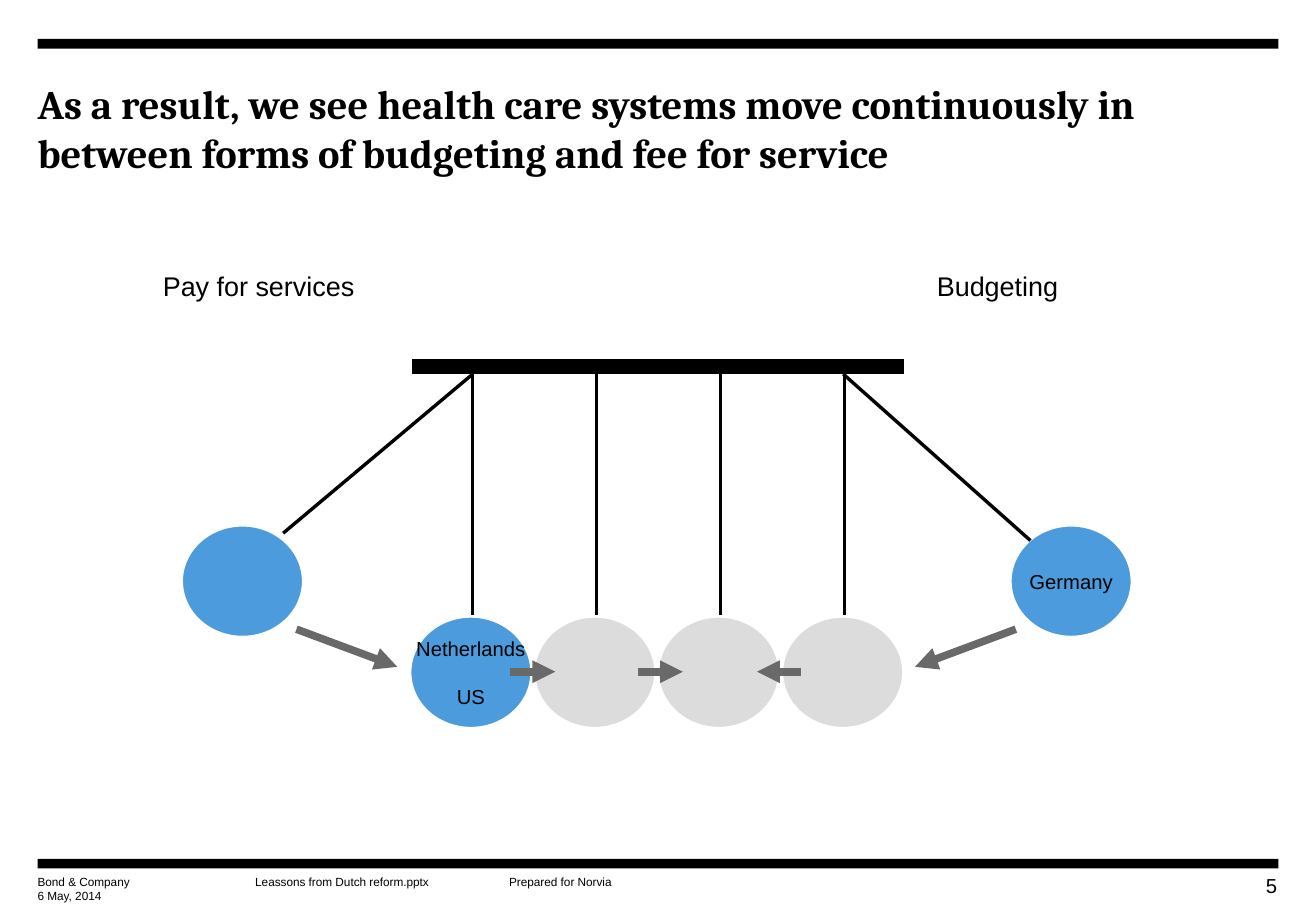
from lxml import etree
from pptx import Presentation
from pptx.dml.color import RGBColor
from pptx.enum.shapes import MSO_CONNECTOR, MSO_SHAPE
from pptx.enum.text import MSO_ANCHOR, MSO_AUTO_SIZE, PP_ALIGN
from pptx.oxml.ns import qn
from pptx.util import Inches, Pt

STRAIGHT = MSO_CONNECTOR.STRAIGHT
OVAL, RECTANGLE = MSO_SHAPE.OVAL, MSO_SHAPE.RECTANGLE
TOP, MIDDLE = MSO_ANCHOR.TOP, MSO_ANCHOR.MIDDLE
LEFT, CENTER, RIGHT = PP_ALIGN.LEFT, PP_ALIGN.CENTER, PP_ALIGN.RIGHT
NO_FIT = MSO_AUTO_SIZE.NONE
BLACK, WHITE, BLUE, SILVER, GREY = "000000", "FFFFFF", "4C9BDC", "DCDCDC", "696969"

WIDTH, HEIGHT = 10.83, 7.5
MARGIN = 0.31
CONTENT_WIDTH = WIDTH - 2 * MARGIN
PITCH = 1.02
FIRST_BALL = 3.37
FIRST_STRING = 3.89
BALL_WIDTH, BALL_HEIGHT = 1.01, 0.93
REST_TOP, SWING_TOP = 5.07, 4.32
BEAM_BOTTOM = 3.08
ARROW_ROW = 5.53


def color(value):
    return RGBColor.from_string(value)


def write(frame, text, size, font="Arial", bold=False, align=LEFT, anchor=TOP):
    frame.margin_left = frame.margin_right = frame.margin_top = frame.margin_bottom = 0
    frame.auto_size = NO_FIT
    frame.vertical_anchor = anchor
    frame.text = text
    for paragraph in frame.paragraphs:
        paragraph.alignment = align
        paragraph.space_before = Pt(0)
        for run in paragraph.runs:
            run.font.size = Pt(size)
            run.font.name = font
            run.font.bold = bold
            run.font.color.rgb = color(BLACK)


prs = Presentation()
prs.slide_width, prs.slide_height = Inches(WIDTH), Inches(HEIGHT)
slide = prs.slides.add_slide(prs.slide_layouts[3])
shapes = slide.shapes

headline = shapes.title
headline.left, headline.top = Inches(MARGIN), Inches(0.65)
headline.width, headline.height = Inches(CONTENT_WIDTH), Inches(0.78)
write(headline.text_frame,
      "As a result, we see health care systems move continuously in "
      "between forms of budgeting and fee for service", 24, "Cambria", True)

for index, left, payment_form in [(1, 1.34, "Pay for services"), (2, 7.71, "Budgeting")]:
    label = slide.placeholders[index]
    label.left, label.top = Inches(left), Inches(2.22)
    label.width, label.height = Inches(2.54), Inches(0.63)
    write(label.text_frame, payment_form, 16)
    properties = label.text_frame.paragraphs[0]._p.get_or_add_pPr()
    properties.set("marL", "0")
    properties.set("indent", "0")
    etree.SubElement(properties, qn("a:buNone"))

footer = [
    (MARGIN, 7.2, 1.2, "Bond & Company", 7, LEFT),
    (MARGIN, 7.32, 1.2, "6 May, 2014", 7, LEFT),
    (2.1, 7.2, 1.85, "Leassons from Dutch reform.pptx", 7, LEFT),
    (4.19, 7.2, 1.2, "Prepared for Norvia", 7, LEFT),
    (9.92, 7.19, 0.59, "5", 12, RIGHT),
]
for left, top, width, text, size, align in footer:
    note = shapes.add_textbox(Inches(left), Inches(top), Inches(width), Inches(size / 60))
    note.text_frame.word_wrap = True
    write(note.text_frame, text, size, align=align)

rest_balls = [
    (OVAL, FIRST_BALL + PITCH * column, REST_TOP, BALL_WIDTH, BALL_HEIGHT, fill, 2.25, text)
    for column, (fill, text) in enumerate(
        [(BLUE, "Netherlands\nUS"), (SILVER, ""), (SILVER, ""), (SILVER, "")])
]
pendulum = [
    (RECTANGLE, MARGIN, 0.32, CONTENT_WIDTH, 0.08, BLACK, 0, ""),
    (RECTANGLE, MARGIN, 7.07, CONTENT_WIDTH, 0.08, BLACK, 0, ""),
    (RECTANGLE, 3.38, 2.95, 4.07, 0.14, BLACK, 1, ""),
    *rest_balls,
    (OVAL, 1.49, SWING_TOP, BALL_WIDTH, BALL_HEIGHT, BLUE, 2.25, ""),
    (OVAL, 8.31, SWING_TOP, BALL_WIDTH, BALL_HEIGHT, BLUE, 2.25, "Germany"),
]
for kind, left, top, width, height, fill, outline, text in pendulum:
    part = shapes.add_shape(kind, Inches(left), Inches(top), Inches(width), Inches(height))
    part.shadow.inherit = False
    part.fill.solid()
    part.fill.fore_color.rgb = color(fill)
    if outline:
        part.line.color.rgb = color(WHITE)
        part.line.width = Pt(outline)
    else:
        part.line.fill.background()
    if text:
        part.text_frame.word_wrap = False
        write(part.text_frame, text, 12, align=CENTER, anchor=MIDDLE)
        for country in part.text_frame.paragraphs[1:]:
            country.space_before = Pt(14)

strings = [(FIRST_STRING + PITCH * column, 5.06, FIRST_STRING + PITCH * column, BEAM_BOTTOM)
           for column in range(4)]
strings += [(FIRST_STRING, BEAM_BOTTOM, 2.33, 4.39), (6.94, BEAM_BOTTOM, 8.48, 4.45)]
pushes = [
    (2.44, 5.18, 3.27, 5.49),
    (8.36, 5.18, 7.53, 5.49),
    (4.2, ARROW_ROW, 4.57, ARROW_ROW),
    (5.25, ARROW_ROW, 5.62, ARROW_ROW),
    (6.59, ARROW_ROW, 6.23, ARROW_ROW),
]
for group, stroke, weight, arrow in [(strings, BLACK, 2, False), (pushes, GREY, 4.5, True)]:
    for ends in group:
        link = shapes.add_connector(STRAIGHT, *[Inches(value) for value in ends])
        link.line.color.rgb = color(stroke)
        link.line.width = Pt(weight)
        if arrow:
            etree.SubElement(link.line._get_or_add_ln(), qn("a:tailEnd"), type="triangle")
        etree.SubElement(link._element.spPr, qn("a:effectLst"))

prs.save("out.pptx")
